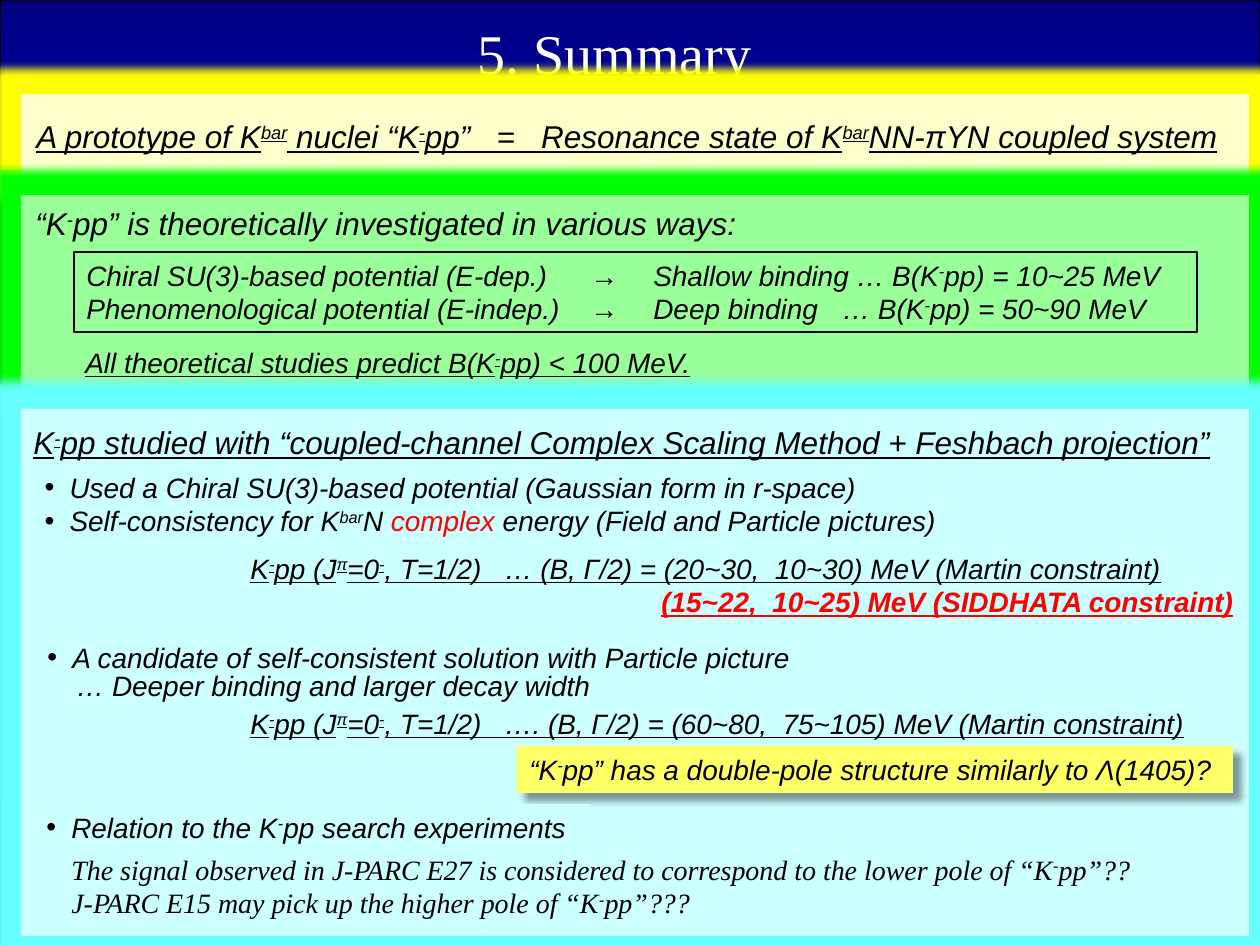
from dataclasses import dataclass

from lxml.etree import SubElement
from pptx import Presentation
from pptx.dml.color import RGBColor
from pptx.enum.shapes import MSO_SHAPE as Preset
from pptx.enum.text import MSO_ANCHOR as Anchor, PP_ALIGN as Align
from pptx.oxml.ns import qn
from pptx.util import Emu, Pt

PX_PER_INCH = 126
BLACK, RED, CYAN = "000000", "FF0000", "CCFFFF"
COLUMNS = (504, 567, 756)


@dataclass
class Panel:
    top: int
    height: int
    fill: str
    glow: str


@dataclass
class Line:
    text: str
    bullet: bool = False
    underline: bool = False
    bold: bool = False
    color: str = BLACK
    indent: int = 0
    tabs: tuple[int, ...] = ()


@dataclass
class Block:
    at: tuple[int, int, int, int]
    lines: list[Line]
    size: int = 16
    font: str = "Arial"
    fill: str = ""
    outline: bool = False
    shadow: bool = False
    body: bool = False


PANELS = [
    Panel(94, 82, "FFFFCC", "FFFF00"),
    Panel(195, 193, "99FF99", "00FF00"),
    Panel(409, 527, CYAN, "66FFFF"),
]

BLOCKS = [
    Block((24, 111, 1237, 40), [
        Line("A prototype of K^bar^ nuclei “K^-^pp”   =   Resonance state of K^bar^NN-πYN coupled system",
             underline=True)], size=18),
    Block((23, 198, 737, 50), [
        Line("“K^-^pp” is theoretically investigated in various ways:")], size=18),
    Block((74, 252, 1123, 80), [
        Line("Chiral SU(3)-based potential (E-dep.)\t→\tShallow binding … B(K^-^pp) = 10~25 MeV",
             tabs=COLUMNS),
        Line("Phenomenological potential (E-indep.)\t→\tDeep binding\t… B(K^-^pp) = 50~90 MeV",
             tabs=COLUMNS)], outline=True),
    Block((73, 339, 1144, 47), [
        Line("All theoretical studies predict B(K^-^pp) < 100 MeV.", underline=True)]),
    Block((21, 417, 1213, 50), [
        Line("K^-^pp studied with “coupled-channel Complex Scaling Method + Feshbach projection”",
             underline=True)], size=18, fill=CYAN),
    Block((32, 464, 945, 80), [
        Line("Used a Chiral SU(3)-based potential (Gaussian form in r-space)", bullet=True),
        Line("Self-consistency for K^bar^N *complex* energy (Field and Particle pictures)",
             bullet=True)], fill=CYAN, body=True),
    Block((238, 545, 1027, 80), [
        Line("K^-^pp (J^π^=0^-^, T=1/2)   … (B, Γ/2) = (20~30,  10~30) MeV (Martin constraint)",
             underline=True),
        Line("(15~22,  10~25) MeV (SIDDHATA constraint)",
             underline=True, bold=True, color=RED, indent=411)]),
    Block((35, 634, 777, 47), [
        Line("A candidate of self-consistent solution with Particle picture", bullet=True)], fill=CYAN),
    Block((64, 662, 546, 47), [Line("… Deeper binding and larger decay width")]),
    Block((238, 700, 968, 47), [
        Line("K^-^pp (J^π^=0^-^, T=1/2)   …. (B, Γ/2) = (60~80,  75~105) MeV (Martin constraint)",
             underline=True)]),
    Block((517, 746, 716, 47), [
        Line("“K^-^pp” has a double-pole structure similarly to Λ(1405)?")],
        fill="FFFF66", shadow=True),
    Block((34, 804, 556, 47), [
        Line("Relation to the K^-^pp search experiments", bullet=True)], fill=CYAN),
    Block((59, 846, 1190, 80), [
        Line("The signal observed in J-PARC E27 is considered to correspond to the lower pole of “K^-^pp”??"),
        Line("J-PARC E15 may pick up the higher pole of “K^-^pp”???")],
        font="Times New Roman", fill=CYAN),
]


def px(length: int) -> Emu:
    return Emu(round(length * 914400 / PX_PER_INCH))


def rgb(color: str) -> RGBColor:
    return RGBColor.from_string(color)


def add_node(parent, tag: str, **attributes):
    return SubElement(parent, qn(tag), {name: str(value) for name, value in attributes.items()})


def place(shape, at: tuple[int, int, int, int]) -> None:
    shape.left, shape.top, shape.width, shape.height = map(px, at)


def add_backdrop(page) -> None:
    backdrop = page.shapes.add_shape(Preset.RECTANGLE, 0, 0, px(1260), px(949))
    backdrop.shadow.inherit = False
    backdrop.line.color.rgb = rgb(BLACK)
    backdrop.line.width = Pt(1)
    backdrop.fill.gradient()
    stops = backdrop._element.spPr.find(qn("a:gradFill")).find(qn("a:gsLst"))
    for stop in list(stops):
        stops.remove(stop)
    for position, color in ((0, "000080"), (50000, "0000FF"), (100000, "000080")):
        add_node(add_node(stops, "a:gs", pos=position), "a:srgbClr", val=color)
    backdrop.fill.gradient_angle = 270


def add_title(page) -> None:
    title = page.shapes.title
    page.shapes._spTree.append(title._element)
    place(title, (147, 0, 935, 105))
    title.text_frame.text = "5. Summary"
    title.text_frame.vertical_anchor = Anchor.MIDDLE
    para = title.text_frame.paragraphs[0]
    para.alignment = Align.CENTER
    font = para.runs[0].font
    font.name, font.size, font.color.rgb = "Times New Roman", Pt(32), rgb("FFFFFF")


def add_panel(page, panel: Panel) -> None:
    box = page.shapes.add_shape(Preset.RECTANGLE, px(21), px(panel.top), px(1228), px(panel.height))
    box.fill.solid()
    box.fill.fore_color.rgb = rgb(panel.fill)
    box.line.fill.background()
    box.shadow.inherit = False
    effects = box._element.spPr.find(qn("a:effectLst"))
    add_node(add_node(effects, "a:glow", rad=Pt(10)), "a:srgbClr", val=panel.glow)


def add_shadow(box) -> None:
    effects = add_node(box._element.spPr, "a:effectLst")
    shadow = add_node(effects, "a:outerShdw", blurRad=Pt(4), dist=Pt(6), dir=45 * 60000,
                      algn="tl", rotWithShape=0)
    add_node(add_node(shadow, "a:srgbClr", val=BLACK), "a:alpha", val=40000)


def write_line(para, line: Line, block: Block) -> None:
    para.space_before = Pt(0)
    para.alignment = Align.LEFT
    properties = para._p.get_or_add_pPr()
    margin = 25 if line.bullet else line.indent
    properties.set("marL", str(px(margin)))
    properties.set("indent", str(px(-25 if line.bullet else 0)))
    if line.bullet:
        add_node(properties, "a:buFont", typeface="Arial")
        add_node(properties, "a:buChar", char="•")
    if line.tabs:
        stops = add_node(properties, "a:tabLst")
        for stop in line.tabs:
            add_node(stops, "a:tab", pos=px(stop), algn="l")
    for part, section in enumerate(line.text.split("*")):
        for piece, text in enumerate(section.split("^")):
            span = para.add_run()
            span.text = text
            font = span.font
            font.name, font.size = block.font, Pt(block.size)
            font.italic, font.bold, font.underline = True, line.bold, line.underline
            font.color.rgb = rgb(RED if part % 2 else line.color)
            if piece % 2:
                span._r.get_or_add_rPr().set("baseline", "30000")


def add_block(page, block: Block) -> None:
    if block.body:
        box = page.placeholders[1]
        page.shapes._spTree.append(box._element)
    else:
        box = page.shapes.add_textbox(0, 0, 0, 0)
    place(box, block.at)
    if block.fill:
        box.fill.solid()
        box.fill.fore_color.rgb = rgb(block.fill)
    if block.outline:
        box.line.color.rgb = rgb(BLACK)
        box.line.width = Pt(0.75)
    if block.shadow:
        add_shadow(box)
    frame = box.text_frame
    frame.word_wrap = True
    frame.vertical_anchor = Anchor.TOP
    for index, line in enumerate(block.lines):
        write_line(frame.add_paragraph() if index else frame.paragraphs[0], line, block)


def main() -> None:
    deck = Presentation()
    deck.slide_width, deck.slide_height = px(1260), px(945)
    page = deck.slides.add_slide(deck.slide_layouts[1])
    add_backdrop(page)
    add_title(page)
    for panel in PANELS:
        add_panel(page, panel)
    for block in BLOCKS:
        add_block(page, block)
    deck.save("out.pptx")


if __name__ == "__main__":
    main()
